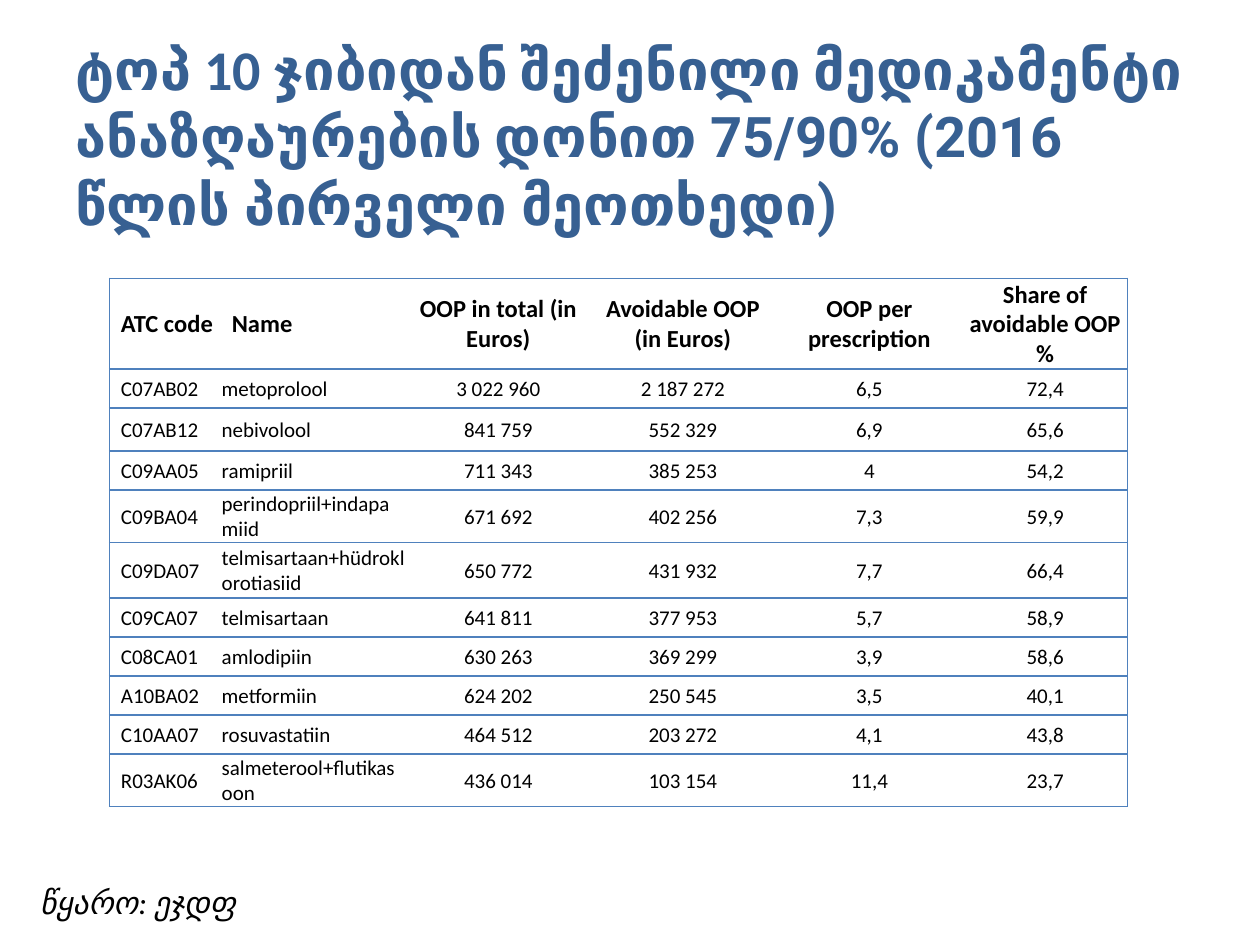
from lxml.etree import SubElement
from pptx import Presentation
from pptx.dml.color import RGBColor
from pptx.enum.text import MSO_ANCHOR, MSO_AUTO_SIZE, PP_ALIGN
from pptx.oxml.ns import qn
from pptx.util import Inches, Pt

BLUE, RULE, BLACK, WHITE = "376092", "4F81BD", "000000", "FFFFFF"

TITLE = [
    ("ტოპ 10 ჯიბიდან შეძენილი მედიკამენტი ანაზღაურების დონით ", "Calibri"),
    ("75/90% (2016 წლის პირველი მეოთხედი)", "Roboto"),
]
SOURCE = "წყარო: ეჯდფ"
ROWS = [
    ("ATC code", "Name", "OOP in total (in Euros)", "Avoidable OOP (in Euros)",
     "OOP per prescription", "Share of avoidable OOP %"),
    ("C07AB02", "metoprolool", "3 022 960", "2 187 272", "6,5", "72,4"),
    ("C07AB12", "nebivolool", "841 759", "552 329", "6,9", "65,6"),
    ("C09AA05", "ramipriil", "711 343", "385 253", "4", "54,2"),
    ("C09BA04", "perindopriil+indapamiid", "671 692", "402 256", "7,3", "59,9"),
    ("C09DA07", "telmisartaan+hüdroklorotiasiid", "650 772", "431 932", "7,7", "66,4"),
    ("C09CA07", "telmisartaan", "641 811", "377 953", "5,7", "58,9"),
    ("C08CA01", "amlodipiin", "630 263", "369 299", "3,9", "58,6"),
    ("A10BA02", "metformiin", "624 202", "250 545", "3,5", "40,1"),
    ("C10AA07", "rosuvastatiin", "464 512", "203 272", "4,1", "43,8"),
    ("R03AK06", "salmeterool+flutikasoon", "436 014", "103 154", "11,4", "23,7"),
]
COL_WIDTHS = [0.88, 1.48, 1.45, 1.48, 1.48, 1.31]
ROW_HEIGHTS = [0.71, 0.31, 0.34, 0.31, 0.41, 0.44, 0.31, 0.31, 0.31, 0.31, 0.41]


def rgb(value):
    return RGBColor.from_string(value)


def add_run(p, text, size, color=BLACK, **font):
    r = p.add_run()
    r.text = text
    r.font.color.rgb = rgb(color)
    for name, value in {"name": "Calibri", "size": Pt(size), **font}.items():
        setattr(r.font, name, value)


def set_borders(cell, ruled):
    """Rule the sides named in ruled (L, R, T, B) and hide the others."""
    tc_pr = cell._tc.get_or_add_tcPr()
    for side in "LRTB":
        ln = SubElement(tc_pr, qn(f"a:ln{side}"), w=str(Pt(1)))
        if side in ruled:
            fill = SubElement(ln, qn("a:solidFill"))
            SubElement(fill, qn("a:srgbClr"), val=RULE)
        else:
            SubElement(ln, qn("a:noFill"))


def fill_cell(cell, text, row, col):
    header = row == 0
    last = len(COL_WIDTHS) - 1
    set_borders(cell, "TB" + {0: "L", last: "R"}.get(col, ""))
    cell.fill.solid()
    cell.fill.fore_color.rgb = rgb(WHITE)
    indented = col == 0 or (header and col == 1)
    layout = {
        "vertical_anchor": MSO_ANCHOR.MIDDLE,
        "margin_left": Inches(0.09 if indented else 0.01),
        "margin_top": Inches(0.01),
        "margin_right": Inches(0.01),
        "margin_bottom": 0,
    }
    for name, value in layout.items():
        setattr(cell, name, value)
    p = cell.text_frame.paragraphs[0]
    p.alignment = PP_ALIGN.LEFT if col < 2 else PP_ALIGN.CENTER
    add_run(p, text, 14 if header else 12, bold=header)


def add_title(s):
    sp = s.shapes.title
    sp.left, sp.top, sp.width, sp.height = map(Inches, (0.5, 0.3, 9, 1.55))
    tf = sp.text_frame
    tf.auto_size = MSO_AUTO_SIZE.NONE
    tf.vertical_anchor = MSO_ANCHOR.MIDDLE
    p = tf.paragraphs[0]
    p.alignment = PP_ALIGN.LEFT
    for text, font in TITLE:
        add_run(p, text, 32, BLUE, name=font, bold=True)


def add_medicine_table(s):
    box = map(Inches, (0.87, 2.21, sum(COL_WIDTHS), sum(ROW_HEIGHTS)))
    table = s.shapes.add_table(len(ROWS), len(COL_WIDTHS), *box).table
    table.horz_banding = False
    for column, width in zip(table.columns, COL_WIDTHS):
        column.width = Inches(width)
    for i, (values, height) in enumerate(zip(ROWS, ROW_HEIGHTS)):
        table.rows[i].height = Inches(height)
        for j, text in enumerate(values):
            fill_cell(table.cell(i, j), text, i, j)


def add_source(s):
    tf = s.shapes.add_textbox(*map(Inches, (0.22, 6.96, 3.32, 0.4))).text_frame
    tf.word_wrap = True
    tf.auto_size = MSO_AUTO_SIZE.SHAPE_TO_FIT_TEXT
    add_run(tf.paragraphs[0], SOURCE, 18, italic=True)


def main():
    prs = Presentation()
    prs.slide_width, prs.slide_height = Inches(10), Inches(7.5)
    s = prs.slides.add_slide(prs.slide_layouts[5])
    add_title(s)
    add_medicine_table(s)
    add_source(s)
    prs.save("out.pptx")


if __name__ == "__main__":
    main()
